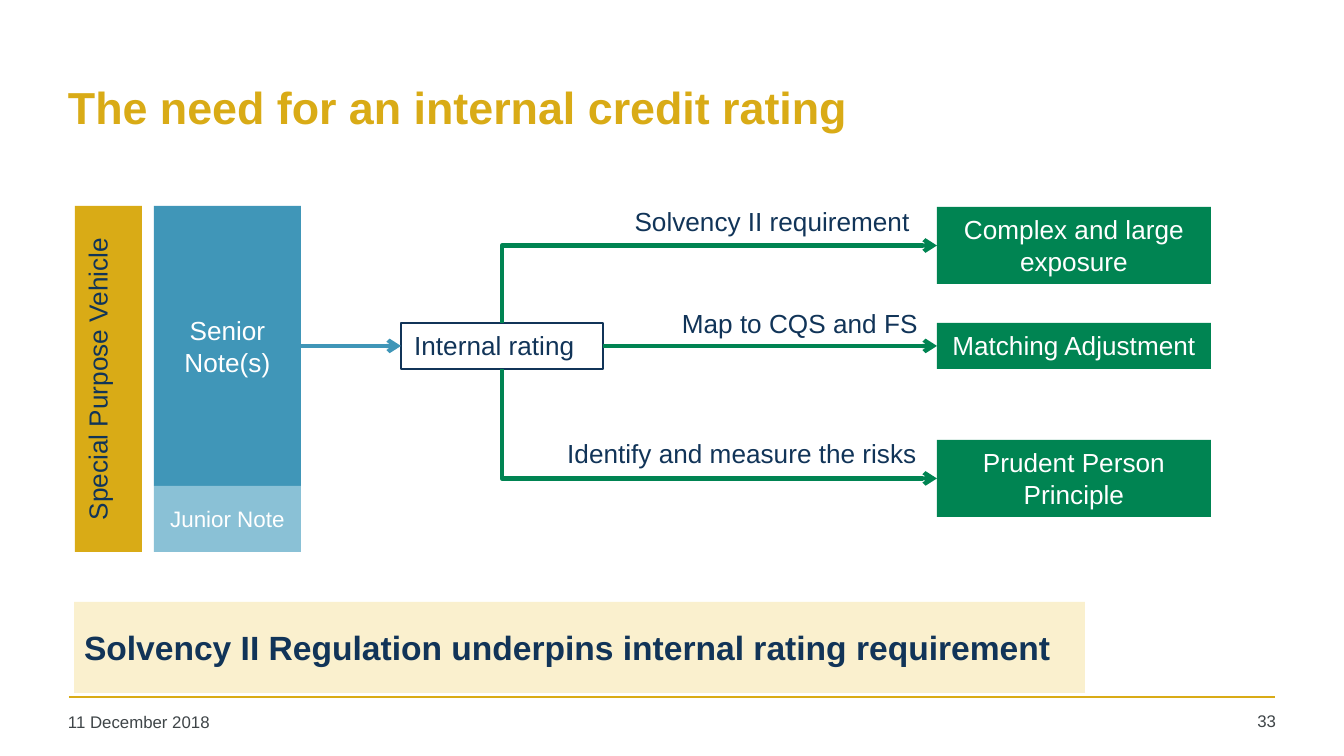
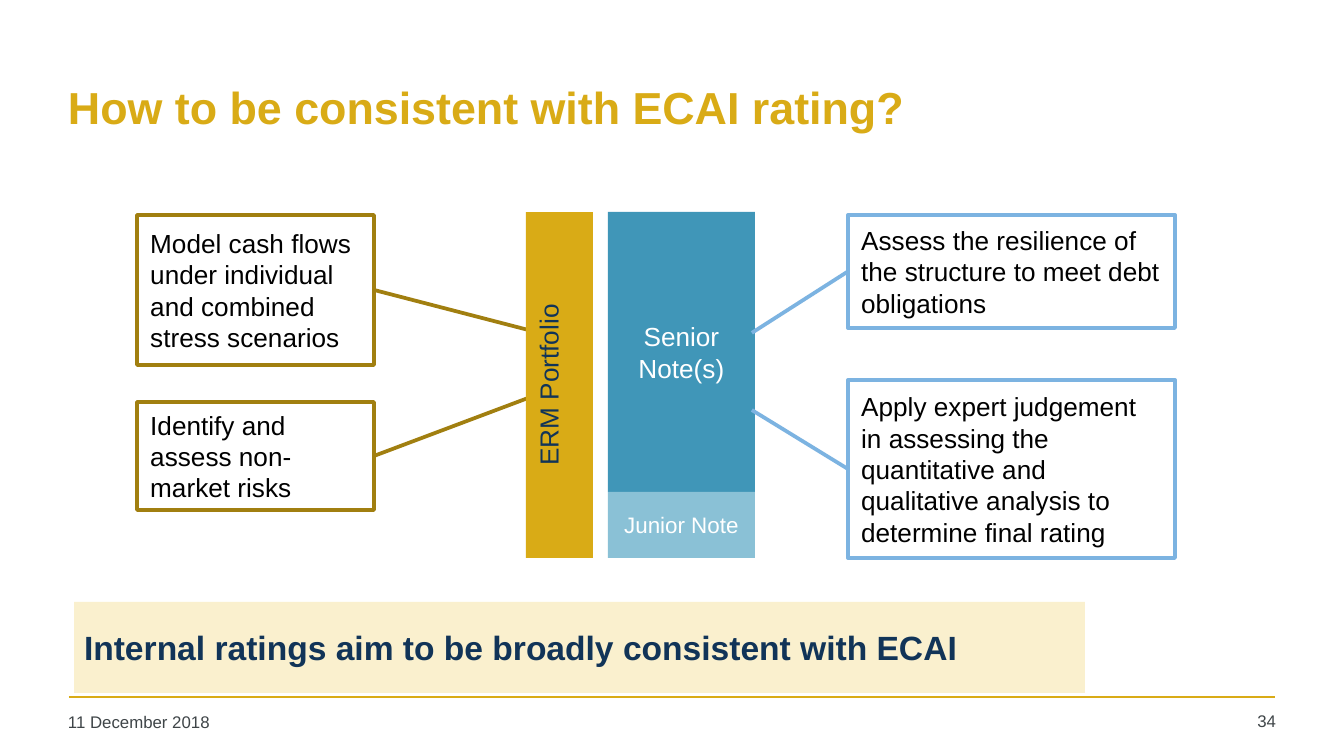
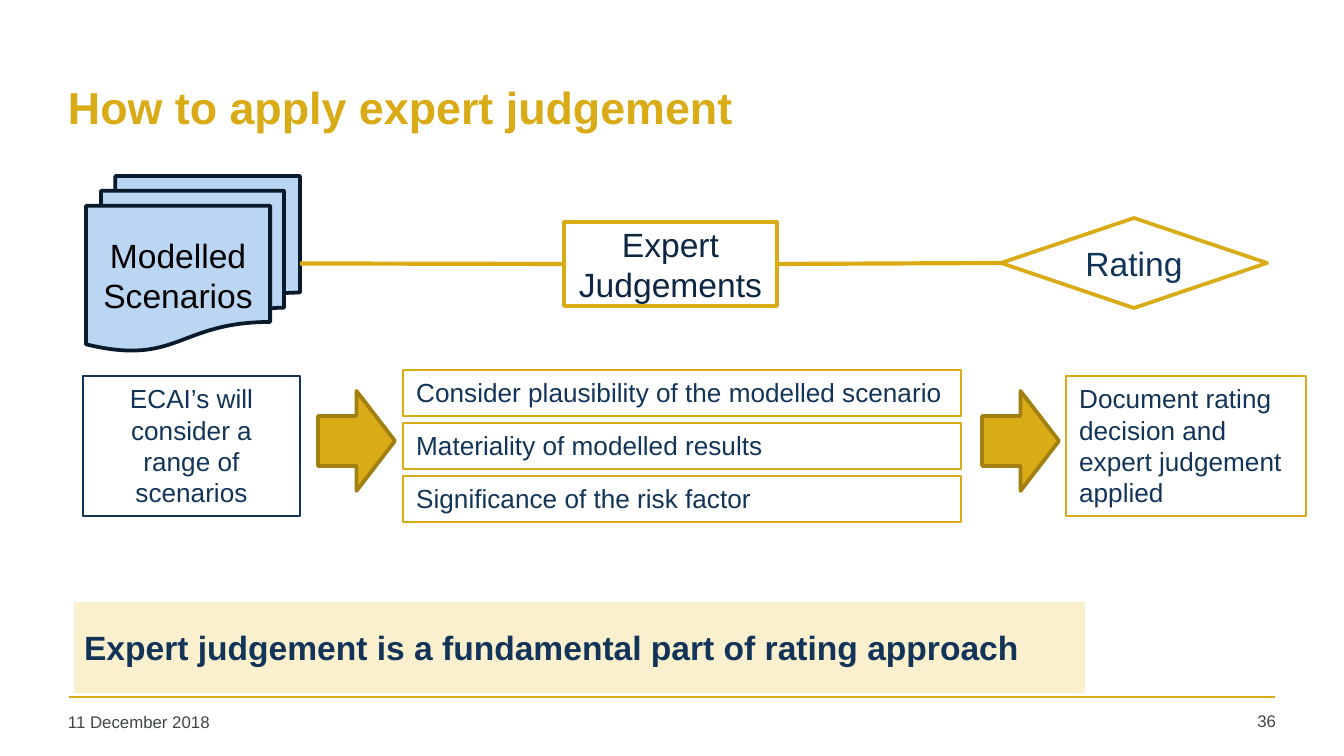
from dataclasses import dataclass

from lxml.etree import SubElement
from pptx import Presentation
from pptx.dml.color import RGBColor
from pptx.enum.shapes import MSO_CONNECTOR, MSO_SHAPE
from pptx.enum.text import MSO_ANCHOR, PP_ALIGN
from pptx.oxml.ns import qn
from pptx.util import Emu, Pt

SCALE = 914400 / 134.4
TOP, LEFT, BOTTOM, RIGHT = range(4)  # connection sites


@dataclass(frozen=True)
class Theme:
    font: str = "Arial"
    gold: str = "D9AB16"
    wire: str = "D9AA11"
    bronze: str = "A17F10"
    cream: str = "FAF0CE"
    navy: str = "113458"
    ink: str = "0D2742"
    night: str = "081A2C"
    gray: str = "3F4548"
    green: str = "008452"
    blue: str = "4096B8"
    pale: str = "8AC1D6"
    sky: str = "7CB3E1"
    mist: str = "BBD6F2"
    white: str = "FFFFFF"
    black: str = "000000"
    title: int = 24
    large: int = 18
    body: int = 14
    small: int = 12
    foot: int = 9


THEME = Theme()


def px(num):
    return Emu(round(num * SCALE))


def rgb(code):
    return RGBColor.from_string(code)


def write(shape, text, color=THEME.navy, size=THEME.body, align=PP_ALIGN.LEFT,
          anchor=MSO_ANCHOR.TOP, bold=False, tight=False):
    """Fill a shape with one paragraph; tight narrows the insets."""
    frame = shape.text_frame
    frame.word_wrap = True
    frame.vertical_anchor = anchor
    if tight:
        frame.margin_left = frame.margin_right = px(10)
        frame.margin_top = frame.margin_bottom = px(5)
    frame.text = text
    para = frame.paragraphs[0]
    para.alignment = align
    font = para.runs[0].font
    font.name, font.size, font.bold = THEME.font, Pt(size), bold
    font.color.rgb = rgb(color)


def label(slide, area, text, **style):
    write(slide.shapes.add_textbox(*map(px, area)), text, **style)


def box(slide, area, text="", fill=None, line=None, width=0.75,
        kind=MSO_SHAPE.RECTANGLE, **style):
    shape = slide.shapes.add_shape(kind, *map(px, area))
    shape.shadow.inherit = False
    if fill:
        shape.fill.solid()
        shape.fill.fore_color.rgb = rgb(fill)
    else:
        shape.fill.background()
    if line:
        shape.line.color.rgb = rgb(line)
        shape.line.width = Pt(width)
    else:
        shape.line.fill.background()
    if text:
        write(shape, text, **style)
    return shape


def draw(slide, ends, color, width, kind=MSO_CONNECTOR.STRAIGHT):
    wire = slide.shapes.add_connector(kind, *map(px, ends))
    wire.line.color.rgb = rgb(color)
    wire.line.width = Pt(width)
    SubElement(wire.element.spPr, qn("a:effectLst"))
    return wire


def link(slide, start, exit, stop, entry, color, arrow=True, bent=False):
    """Join two shapes; the arrowhead sits at the start, a bent link has one corner."""
    kind = MSO_CONNECTOR.ELBOW if bent else MSO_CONNECTOR.STRAIGHT
    wire = draw(slide, (0, 0, 0, 0), color, 2.25, kind)
    wire.begin_connect(start, exit)
    wire.end_connect(stop, entry)
    props = wire.element.spPr
    if bent:
        props.find(qn("a:prstGeom")).set("prst", "bentConnector2")
    if arrow:
        SubElement(props.find(qn("a:ln")), qn("a:headEnd"), type="arrow")


def callout(slide, area, text, color, tip):
    """Framed note whose line runs from the side facing the tip."""
    left, top, wide, high = area
    note = box(slide, area, text, line=color, width=2, color=THEME.black,
               kind=MSO_SHAPE.LINE_CALLOUT_1, anchor=MSO_ANCHOR.MIDDLE)
    side = 1 if tip[0] > left else 0
    spots = (0.5, side, (tip[1] - top) / high, (tip[0] - left) / wide)
    for num, spot in enumerate(spots):
        note.adjustments[num] = round(spot, 3)


def stack(slide, left, top, gap, text):
    """Upright bar beside the two notes; returns the senior note."""
    mid = dict(color=THEME.white, align=PP_ALIGN.CENTER, anchor=MSO_ANCHOR.MIDDLE)
    bar = box(slide, (left, top, 67, 346), text, THEME.gold, align=PP_ALIGN.CENTER)
    bar.text_frame._txBody.bodyPr.set("vert", "vert270")
    side = left + 67 + gap
    senior = box(slide, (side, top, 147, 280), "Senior Note(s)", THEME.blue, **mid)
    box(slide, (side, top + 280, 147, 66), "Junior Note", THEME.pale,
        size=THEME.small, **mid)
    return senior


def page(deck, title, claim, num):
    """Add a slide with its title, claim band and footer."""
    slide = deck.slides.add_slide(deck.slide_layouts[6])
    draw(slide, (69, 697, 1275, 697), THEME.gold, 1)
    label(slide, (58, 44, 1219, 126), title, color=THEME.gold, size=THEME.title,
          anchor=MSO_ANCHOR.MIDDLE, bold=True, tight=True)
    foot = dict(color=THEME.gray, size=THEME.foot, tight=True)
    label(slide, (58, 707, 296, 36), "11 December 2018", **foot)
    label(slide, (1191, 706, 95, 38), str(num), align=PP_ALIGN.RIGHT, **foot)
    box(slide, (74, 602, 1011, 91), claim, THEME.cream, size=THEME.large,
        anchor=MSO_ANCHOR.MIDDLE, bold=True, tight=True)
    return slide


def need(deck):
    slide = page(deck, "The need for an internal credit rating",
                 "Solvency II Regulation underpins internal rating requirement", 33)
    senior = stack(slide, 75, 206, 12, "Special Purpose Vehicle")
    rating = box(slide, (401, 323, 202, 46), "Internal rating", line=THEME.navy)
    link(slide, rating, LEFT, senior, RIGHT, THEME.blue)
    uses = (
        ("Solvency II requirement", 923, 199, "Complex and large exposure", 207, 77, TOP),
        ("Map to CQS and FS", 931, 301, "Matching Adjustment", 323, 46, RIGHT),
        ("Identify and measure the risks", 930, 431, "Prudent Person Principle",
         440, 77, BOTTOM),
    )
    for text, edge, line, goal, top, high, side in uses:
        use = box(slide, (937, top, 274, high), goal, THEME.green,
                  color=THEME.white, align=PP_ALIGN.CENTER)
        link(slide, use, LEFT, rating, side, THEME.green, bent=side != RIGHT)
        label(slide, (edge - 386, line, 386, 46), text, align=PP_ALIGN.RIGHT)


def match(deck):
    slide = page(deck, "How to be consistent with ECAI rating?",
                 "Internal ratings aim to be broadly consistent with ECAI", 34)
    for top, high, tip, text in (
        (215, 150, 332, "Model cash flows under individual and combined stress scenarios"),
        (402, 108, 395, "Identify and assess non-market risks"),
    ):
        callout(slide, (137, top, 237, high), text, THEME.bronze, (536, tip))
    stack(slide, 526, 212, 15, "ERM Portfolio")
    for top, high, tip, text in (
        (215, 113, 333, "Assess the resilience of the structure to meet debt obligations"),
        (380, 178, 410, "Apply expert judgement in assessing the quantitative and "
                        "qualitative analysis to determine final rating"),
    ):
        callout(slide, (848, top, 327, high), text, THEME.sky, (752, tip))


def judge(deck):
    slide = page(deck, "How to apply expert judgement",
                 "Expert judgement is a fundamental part of rating approach", 36)
    step = dict(width=2, size=THEME.large, align=PP_ALIGN.CENTER,
                anchor=MSO_ANCHOR.MIDDLE)
    rating = box(slide, (1001, 218, 266, 90), "Rating", line=THEME.gold,
                 kind=MSO_SHAPE.FLOWCHART_DECISION, **step)
    expert = box(slide, (564, 222, 213, 84), "Expert Judgements", line=THEME.gold,
                 color=THEME.ink, kind=MSO_SHAPE.FLOWCHART_PROCESS, **step)
    model = box(slide, (86, 176, 214, 175), "Modelled Scenarios", THEME.mist,
                THEME.night, color=THEME.black,
                kind=MSO_SHAPE.FLOWCHART_MULTIDOCUMENT, **step)
    for start, stop in ((model, expert), (expert, rating)):
        link(slide, start, RIGHT, stop, LEFT, THEME.wire, arrow=False)

    tests = ("Consider plausibility of the modelled scenario",
             "Materiality of modelled results", "Significance of the risk factor")
    for row, text in enumerate(tests):
        box(slide, (403, 370 + 53 * row, 558, 46), text, line=THEME.gold)
    box(slide, (83, 376, 217, 140), "ECAI’s will consider a range of scenarios",
        line=THEME.navy, align=PP_ALIGN.CENTER)
    box(slide, (1066, 376, 240, 140),
        "Document rating decision and expert judgement applied", line=THEME.gold)
    for left in (318, 982):
        box(slide, (left, 391, 77, 100), fill=THEME.gold, line=THEME.bronze,
            width=2, kind=MSO_SHAPE.RIGHT_ARROW)


def main():
    deck = Presentation()
    deck.slide_width, deck.slide_height = px(1344), px(756)
    need(deck)
    match(deck)
    judge(deck)
    deck.save("out.pptx")


if __name__ == "__main__":
    main()
